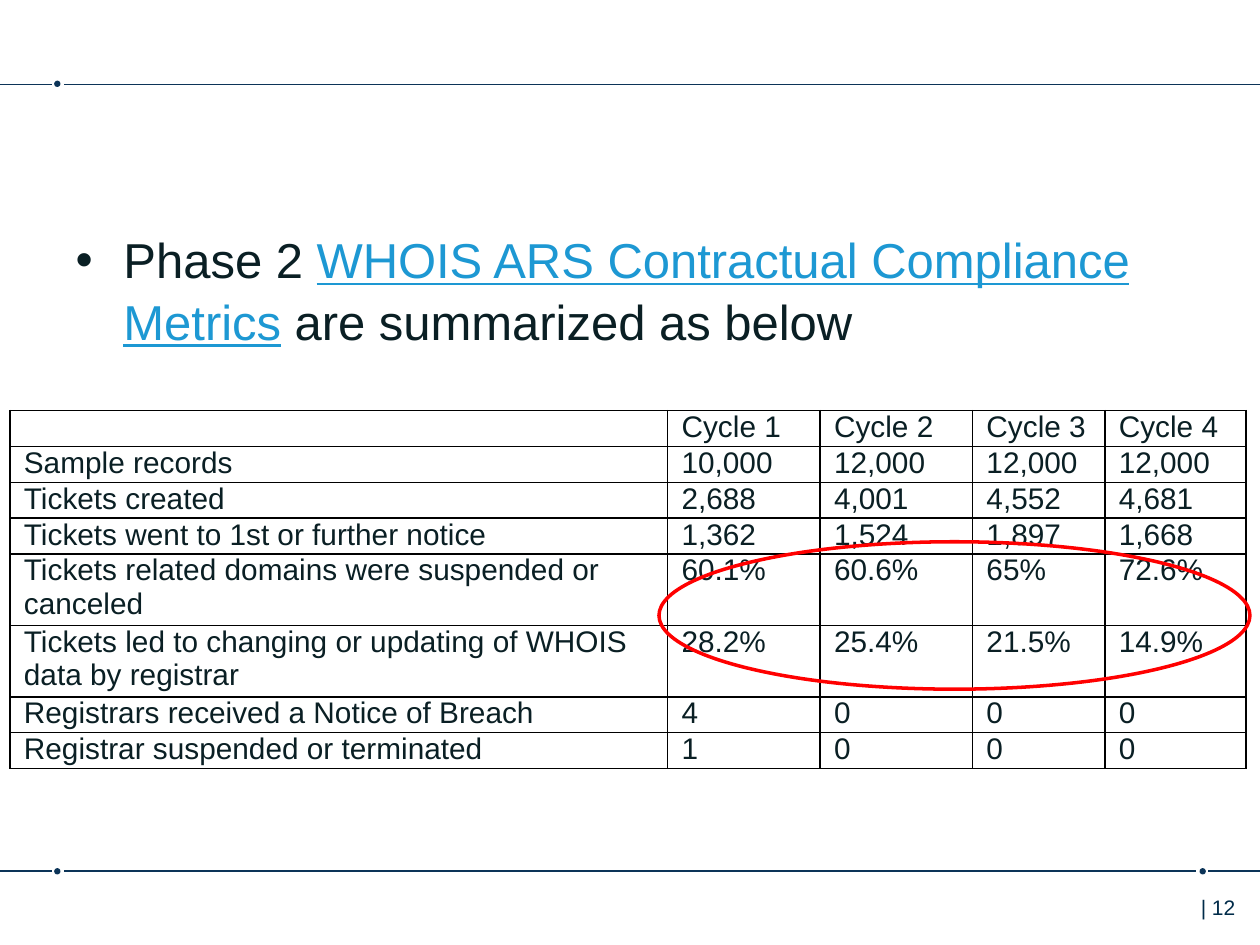
from dataclasses import dataclass

from lxml.etree import SubElement
from pptx import Presentation
from pptx.dml.color import RGBColor
from pptx.enum.shapes import MSO_CONNECTOR, MSO_SHAPE
from pptx.enum.text import MSO_ANCHOR, MSO_AUTO_SIZE
from pptx.oxml.ns import qn
from pptx.util import Inches, Pt

FONT = "Arial"
NAVY, INK, LINK, RED, BLACK = "0C3458", "0A1F24", "1D98D3", "FF0000", "000000"
TABLE_SIZE = 17


@dataclass
class Rule:
    x1: float
    x2: float
    y: float


@dataclass
class Dot:
    x: float
    y: float
    size: float = 0.05


@dataclass
class Span:
    text: str
    color: str = INK
    underline: bool = False


RULES = [
    Rule(0.41, 0, 0.67),
    Rule(10, 0.51, 0.67),
    Rule(0.41, 0, 6.91),
    Rule(9.49, 0.51, 6.91),
    Rule(9.59, 10, 6.91),
]
DOTS = [Dot(0.43, 0.64), Dot(0.43, 6.89), Dot(9.52, 6.89)]
SPANS = [
    Span("Phase 2 "),
    Span("WHOIS ARS Contractual Compliance Metrics", LINK, True),
    Span(" are summarized as below"),
]
COLUMNS = [5.22, 1.21, 1.21, 1.05, 1.12]
ROW_HEIGHT = 0.28
TALL_ROWS = (4, 5)
ROWS = [
    ("", "Cycle 1", "Cycle 2", "Cycle 3", "Cycle 4"),
    ("Sample records", "10,000", "12,000", "12,000", "12,000"),
    ("Tickets created", "2,688", "4,001", "4,552", "4,681"),
    ("Tickets went to 1st or further notice", "1,362", "1,524", "1,897", "1,668"),
    ("Tickets related domains were suspended or canceled", "60.1%", "60.6%", "65%", "72.6%"),
    ("Tickets led to changing or updating of WHOIS data by registrar",
     "28.2%", "25.4%", "21.5%", "14.9%"),
    ("Registrars received a Notice of Breach", "4", "0", "0", "0"),
    ("Registrar suspended or terminated", "1", "0", "0", "0"),
]


def rgb(color: str) -> RGBColor:
    return RGBColor.from_string(color)


def add_run(p, text: str, size: float, color: str, underline: bool = False) -> None:
    r = p.add_run()
    r.text = text
    r.font.name = FONT
    r.font.size = Pt(size)
    r.font.color.rgb = rgb(color)
    if underline:
        r.font.underline = True


def add_rule(s, rule: Rule) -> None:
    c = s.shapes.add_connector(
        MSO_CONNECTOR.STRAIGHT,
        Inches(rule.x1), Inches(rule.y), Inches(rule.x2), Inches(rule.y),
    )
    c.line.color.rgb = rgb(NAVY)
    c.line.width = Pt(1)
    SubElement(c._element.spPr, qn("a:effectLst"))


def add_ellipse(s, x: float, y: float, w: float, h: float):
    sp = s.shapes.add_shape(MSO_SHAPE.OVAL, Inches(x), Inches(y), Inches(w), Inches(h))
    sp.shadow.inherit = False
    return sp


def add_dot(s, dot: Dot) -> None:
    sp = add_ellipse(s, dot.x, dot.y, dot.size, dot.size)
    sp.fill.solid()
    sp.fill.fore_color.rgb = rgb(NAVY)
    sp.line.fill.background()


def add_page_number(s, text: str) -> None:
    tf = s.shapes.add_textbox(Inches(9.29), Inches(7.05), Inches(0.87), Inches(0.4)).text_frame
    tf.word_wrap = True
    tf.margin_left = Inches(0.24)
    add_run(tf.paragraphs[0], text, 12, "002B49")


def fill_body(sp, spans: list[Span]) -> None:
    sp.left, sp.top = Inches(0.5), Inches(1.75)
    sp.width, sp.height = Inches(9.39), Inches(4.95)
    tf = sp.text_frame
    tf.auto_size = MSO_AUTO_SIZE.NONE
    tf.vertical_anchor = MSO_ANCHOR.TOP
    p = tf.paragraphs[0]
    pPr = p._p.get_or_add_pPr()
    pPr.set("marL", str(Inches(0.38)))
    pPr.set("indent", str(-Inches(0.38)))
    SubElement(pPr, qn("a:buFont"), typeface=FONT)
    SubElement(pPr, qn("a:buChar"), char="•")
    p.space_before = Pt(0)
    p.line_spacing = 1.05
    for span in spans:
        add_run(p, span.text, 28, span.color, span.underline)


def add_borders(cell) -> None:
    tcPr = cell._tc.get_or_add_tcPr()
    for side in ("lnL", "lnR", "lnT", "lnB"):
        ln = SubElement(tcPr, qn(f"a:{side}"), w=str(Pt(1)))
        SubElement(SubElement(ln, qn("a:solidFill")), qn("a:srgbClr"), val=BLACK)


def fill_cell(cell, text: str) -> None:
    add_borders(cell)
    cell.fill.background()
    cell.margin_left = cell.margin_right = Inches(0.11)
    cell.margin_top = cell.margin_bottom = 0
    p = cell.text_frame.paragraphs[0]
    if text:
        add_run(p, text, TABLE_SIZE, INK)
    else:
        SubElement(p._p, qn("a:endParaRPr"), sz=str(TABLE_SIZE * 100))


def add_metrics(s) -> None:
    table = s.shapes.add_table(
        len(ROWS), len(COLUMNS), Inches(0.08), Inches(3.26), Inches(9.81), Inches(2.8)
    ).table
    table.first_row = table.horz_banding = False
    for column, width in zip(table.columns, COLUMNS):
        column.width = Inches(width)
    for i, values in enumerate(ROWS):
        table.rows[i].height = Inches(ROW_HEIGHT * (2 if i in TALL_ROWS else 1))
        for j, text in enumerate(values):
            fill_cell(table.cell(i, j), text)


def add_highlight(s) -> None:
    sp = add_ellipse(s, 5.23, 4.3, 4.69, 1.17)
    sp.fill.background()
    sp.line.color.rgb = rgb(RED)
    sp.line.width = Pt(2)


def main() -> None:
    prs = Presentation()
    prs.slide_width, prs.slide_height = Inches(10), Inches(7.5)
    s = prs.slides.add_slide(prs.slide_layouts.get_by_name("Title and Content"))
    title = s.shapes.title._element
    title.getparent().remove(title)
    for rule in RULES:
        add_rule(s, rule)
    for dot in DOTS:
        add_dot(s, dot)
    add_page_number(s, "| 12")
    fill_body(s.placeholders[1], SPANS)
    add_metrics(s)
    add_highlight(s)
    prs.save("out.pptx")


if __name__ == "__main__":
    main()
